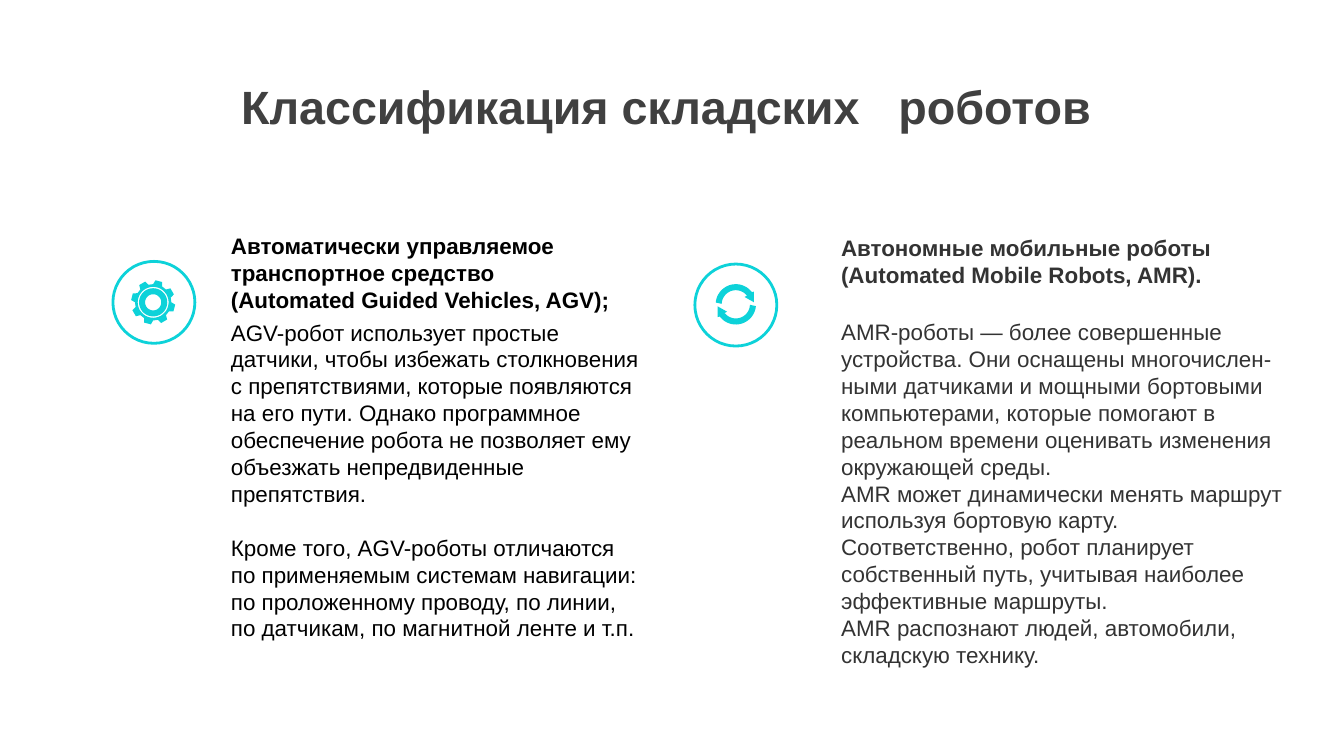
import math
import pptx
import pptx.util
import pptx.dml.color
import pptx.enum.shapes
import pptx.enum.text

PX = 4572
RGB = pptx.dml.color.RGBColor
CYAN = RGB(0x0D, 0xD2, 0xD9)
WHITE = RGB(0xFF, 0xFF, 0xFF)
BLACK = RGB(0x00, 0x00, 0x00)
DARK = RGB(0x33, 0x33, 0x33)
GRAY = RGB(0x40, 0x40, 0x40)
OVAL = pptx.enum.shapes.MSO_SHAPE.OVAL
MID = pptx.enum.text.MSO_ANCHOR.MIDDLE
TOP = pptx.enum.text.MSO_ANCHOR.TOP
LEFT = pptx.enum.text.PP_ALIGN.LEFT
MIDDLE = pptx.enum.text.PP_ALIGN.CENTER
PLAIN = pptx.enum.text.MSO_AUTO_SIZE.NONE


def emu(*vals):
    return [round(v * PX) for v in vals]


def put(obj, vals):
    for key, val in vals.items():
        setattr(obj, key, val)


def polar(rad, deg):
    ang = math.radians(deg)
    return rad * math.cos(ang), rad * math.sin(ang)


def disc(slide, mid, rad, fill=None, line=None, width=1.5):
    x, y = mid
    dot = slide.shapes.add_shape(OVAL, *emu(x - rad, y - rad, 2 * rad, 2 * rad))
    dot.shadow.inherit = False
    if fill is None:
        dot.fill.background()
    else:
        dot.fill.solid()
        dot.fill.fore_color.rgb = fill
    if line is None:
        dot.line.fill.background()
    else:
        dot.line.color.rgb = line
        dot.line.width = pptx.util.Pt(width)


def outline(slide, mid, loops):
    spots = [[emu(mid[0] + x, mid[1] + y) for x, y in loop] for loop in loops]
    pen = slide.shapes.build_freeform(*spots[0][0], scale=1.0)
    pen.add_line_segments(spots[0][1:], close=True)
    for loop in spots[1:]:
        pen.move_to(*loop[0])
        pen.add_line_segments(loop[1:], close=True)
    form = pen.convert_to_shape()
    form.shadow.inherit = False
    form.fill.solid()
    form.fill.fore_color.rgb = CYAN
    form.line.fill.background()


def ring(rad):
    return [polar(rad, deg) for deg in range(0, 360, 10)]


def gear(slide, x, y):
    edge = [(27, -15), (33, -9), (33, 9), (27, 15)]
    teeth = [polar(rad, 15 + 45 * k + turn) for k in range(8) for rad, turn in edge]
    holes = [ring(rad)[::turn] for rad, turn in ((23, -1), (21, 1), (12, -1))]
    outline(slide, (x - 1, y), [teeth] + holes)


def arrows(slide, x, y):
    outer = [polar(30, deg) for deg in range(5, 144, 6)]
    head = [(-27, 19), (-27, 3), (-13, 11), (-17, 13)]
    inner = [polar(21, deg) for deg in range(140, 0, -6)]
    lower = outer + head + inner
    upper = [(-px, -py) for px, py in lower]
    outline(slide, (x, y - 1), [lower, upper])


def write(shape, lines, size, color, bold=False, anchor=MID, align=LEFT, gap=None):
    frame = shape.text_frame
    put(frame, {"word_wrap": True, "auto_size": PLAIN, "vertical_anchor": anchor})
    look = {"name": "Arial", "size": pptx.util.Pt(size), "bold": bold}
    for k, line in enumerate(lines):
        para = frame.paragraphs[0] if k == 0 else frame.add_paragraph()
        para.alignment = align
        if k == gap:
            para.space_before = pptx.util.Pt(14.5)
        run = para.add_run()
        run.text = line
        put(run.font, look)
        run.font.color.rgb = color


def title(slide, box, text):
    shape = slide.shapes.title
    put(shape, dict(zip(("left", "top", "width", "height"), emu(*box))))
    write(shape, [text], 25, GRAY, bold=True, align=MIDDLE)


def column(slide, box, icon, inset, head, body, drop, color, anchor=MID, gap=None):
    x, y, wide, high = box
    mid = x + 61, y + 116
    disc(slide, mid, 61, fill=WHITE, line=CYAN)
    icon(slide, *mid)
    left = x + inset
    tall = 20 + 41 * len(head)
    name = slide.shapes.add_textbox(*emu(left, y, 620, tall))
    write(name, head, 12, color, bold=True)
    text = slide.shapes.add_textbox(*emu(left, y + drop, wide - inset, high - drop))
    write(text, body, 12, color, anchor=anchor, gap=gap)


def main():
    deck = pptx.Presentation()
    put(deck, dict(zip(("slide_width", "slide_height"), emu(2000, 1125))))
    slide = deck.slides.add_slide(deck.slide_layouts[5])
    title(slide, (-9, 95, 2000, 126), "Классификация складских   роботов")
    column(
        slide, (168, 334, 808, 613), gear, 156,
        ["Автоматически управляемое",
         "транспортное средство",
         "(Automated Guided Vehicles, AGV);"],
        ["AGV-робот использует простые",
         "датчики, чтобы избежать столкновения с препятствиями, которые "
         "появляются на его пути. Однако программное обеспечение робота не "
         "позволяет ему объезжать непредвиденные препятствия.",
         "Кроме того, AGV-роботы отличаются",
         "по применяемым системам навигации: по проложенному проводу, по линии,",
         "по датчикам, по магнитной ленте и т.п."],
        148, BLACK, gap=2)
    column(
        slide, (1034, 338, 896, 672), arrows, 198,
        ["Автономные мобильные роботы",
         "(Automated Mobile Robots, AMR)."],
        ["AMR-роботы — более совершенные",
         "устройства. Они оснащены многочислен-ными датчиками и мощными бортовыми",
         "компьютерами, которые помогают в",
         "реальном времени оценивать изменения окружающей среды.",
         "AMR может динамически менять маршрут используя бортовую карту.",
         "Соответственно, робот планирует",
         "собственный путь, учитывая наиболее",
         "эффективные маршруты.",
         "AMR распознают людей, автомобили,",
         "складскую технику."],
        126, DARK, anchor=TOP)
    deck.save("out.pptx")


if __name__ == "__main__":
    main()
